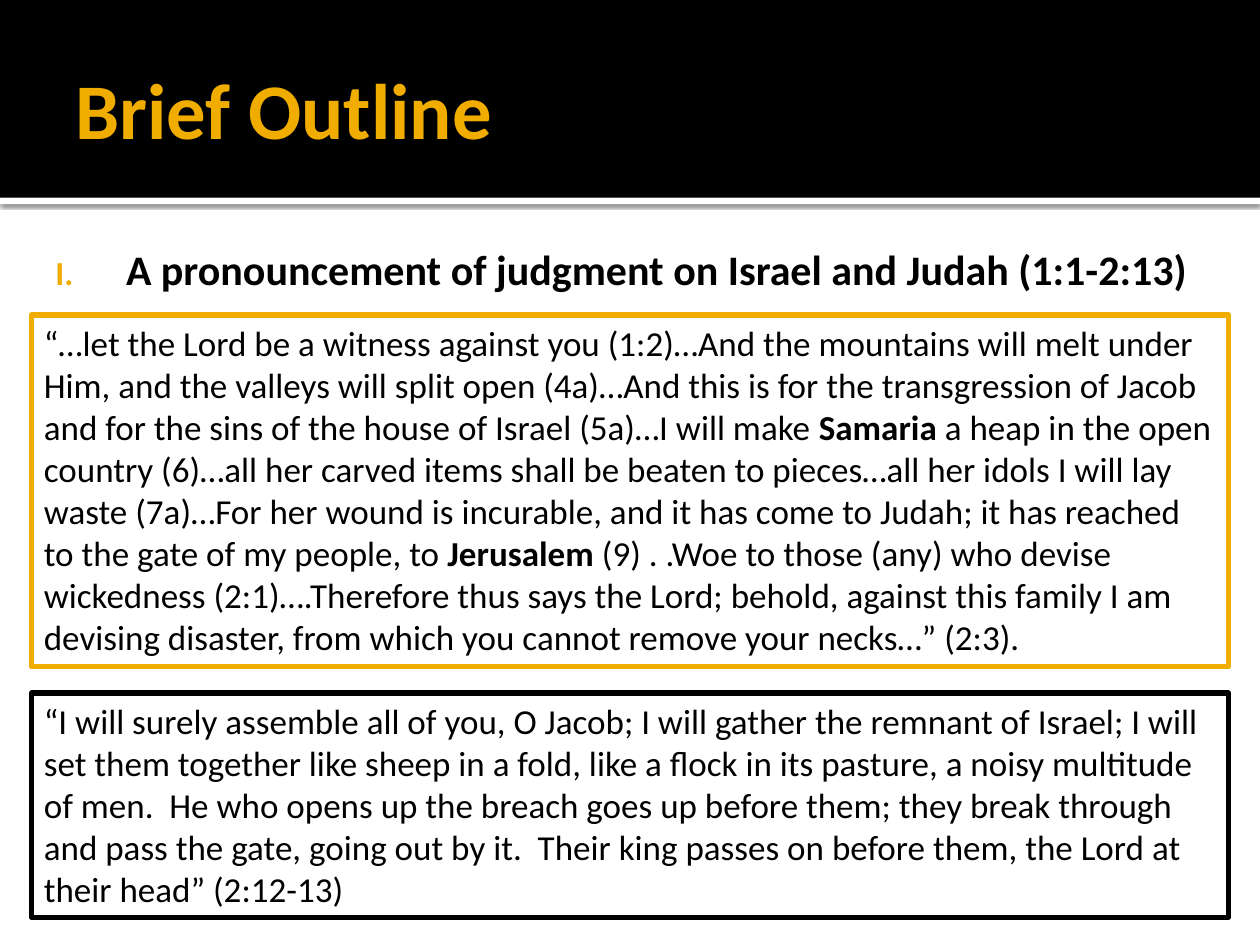
from lxml import etree
from pptx import Presentation
from pptx.dml.color import RGBColor
from pptx.enum.shapes import MSO_SHAPE
from pptx.enum.text import MSO_ANCHOR, MSO_AUTO_SIZE, PP_ALIGN
from pptx.oxml.ns import qn
from pptx.util import Inches, Pt

RECTANGLE = MSO_SHAPE.RECTANGLE
TOP, MIDDLE = MSO_ANCHOR.TOP, MSO_ANCHOR.MIDDLE
LEFT = PP_ALIGN.LEFT
GROW = MSO_AUTO_SIZE.SHAPE_TO_FIT_TEXT

COLORS = {"gold": "F0AD00", "black": "000000", "white": "FFFFFF"}
FONT = "Calibri"

# Passages are lists of (text, bold) runs.
JUDGMENT = [
    ("“…let the Lord be a witness against you (1:2)…And the mountains will melt "
     "under Him, and the valleys will split open (4a)…And this is for the "
     "transgression of Jacob and for the sins of the house of Israel (5a)…I will "
     "make ", False),
    ("Samaria", True),
    (" a heap in the open country (6)…all her carved items shall be beaten to "
     "pieces…all her idols I will lay waste (7a)…For her wound is incurable, and it "
     "has come to Judah; it has reached to the gate of my people, to ", False),
    ("Jerusalem", True),
    (" (9) . .Woe to those (any) who devise wickedness (2:1)….Therefore thus says "
     "the Lord; behold, against this family I am devising disaster, from which you "
     "cannot remove your necks…” (2:3).", False),
]
PROMISE = [
    ("“I will surely assemble all of you, O Jacob; I will gather the remnant of "
     "Israel; I will set them together like sheep in a fold, like a flock in its "
     "pasture, a noisy multitude of men.  He who opens up the breach goes up before "
     "them; they break through and pass the gate, going out by it.  Their king "
     "passes on before them, the Lord at their head” (2:12-13)", False),
]


def rgb(name):
    return RGBColor.from_string(COLORS[name])


def add_band(slide, top, height, color):
    """Add a full-width band without an outline."""
    band = slide.shapes.add_shape(RECTANGLE, 0, Inches(top), Inches(10), Inches(height))
    band.shadow.inherit = False
    band.fill.solid()
    band.fill.fore_color.rgb = rgb(color)
    band.line.fill.background()
    return band


def cast_shadow(shape, blur, distance, opacity):
    """Give the shape a black shadow that falls straight down."""
    effects = shape.element.spPr.find(qn("a:effectLst"))
    shadow = etree.SubElement(
        effects, qn("a:outerShdw"), blurRad=str(Pt(blur)), dist=str(Pt(distance)),
        dir="5400000", algn="tl", rotWithShape="0")
    tint = etree.SubElement(shadow, qn("a:srgbClr"), val=COLORS["black"])
    etree.SubElement(tint, qn("a:alpha"), val=str(opacity * 1000))


def write(shape, runs, size, color, anchor=TOP, margins=(0.1, 0.05, 0.1, 0.05)):
    """Fill the shape with one left-aligned paragraph and return it."""
    frame = shape.text_frame
    frame.word_wrap = True
    frame.vertical_anchor = anchor
    for side, margin in zip(("left", "top", "right", "bottom"), margins):
        setattr(frame, f"margin_{side}", Inches(margin))
    paragraph = frame.paragraphs[0]
    paragraph.alignment = LEFT
    for text, bold in runs:
        run = paragraph.add_run()
        run.text = text
        for name, value in {"name": FONT, "size": Pt(size), "bold": bold}.items():
            setattr(run.font, name, value)
        run.font.color.rgb = rgb(color)
    return paragraph


def add_heading(slide, box, text, size, color, **layout):
    heading = slide.shapes.add_textbox(*map(Inches, box))
    return write(heading, [(text, True)], size, color, **layout)


def number_roman(paragraph, indent, hanging, color, percent):
    """Number the paragraph with a coloured Roman numeral."""
    props = paragraph._p.get_or_add_pPr()
    props.set("marL", str(Inches(indent)))
    props.set("indent", str(-Inches(hanging)))
    bullet_color = etree.SubElement(props, qn("a:buClr"))
    etree.SubElement(bullet_color, qn("a:srgbClr"), val=COLORS[color])
    etree.SubElement(props, qn("a:buSzPct"), val=str(percent * 1000))
    etree.SubElement(props, qn("a:buFont"), typeface="+mj-lt")
    etree.SubElement(props, qn("a:buAutoNum"), type="romanUcPeriod")


def add_passage(slide, top, height, runs, border):
    passage = slide.shapes.add_shape(
        RECTANGLE, Inches(0.25), Inches(top), Inches(9.5), Inches(height))
    passage.shadow.inherit = False
    passage.fill.background()
    passage.line.color.rgb = rgb(border)
    passage.line.width = Pt(3)
    write(passage, runs, 20, "black")
    passage.text_frame.auto_size = GROW


def main():
    deck = Presentation()
    deck.slide_width, deck.slide_height = Inches(10), Inches(7.5)
    slide = deck.slides.add_slide(deck.slide_layouts[6])

    rule = add_band(slide, 1.57, 0.05, "white")
    cast_shadow(rule, blur=2.5, distance=0.8, opacity=60)
    add_band(slide, 0, 1.57, "black")

    add_heading(slide, (0.5, 0.17, 9, 1.37), "Brief Outline", 45, "gold",
                anchor=MIDDLE, margins=(0.1, 0.05, 0.05, 0.05))
    point = add_heading(slide, (0.25, 1.83, 9.75, 0.6),
                        "A pronouncement of judgment on Israel and Judah (1:1-2:13)",
                        24, "black", margins=(0.06, 0.1, 0.1, 0.05))
    number_roman(point, indent=0.69, hanging=0.56, color="gold", percent=80)

    add_passage(slide, 2.5, 2.79, JUDGMENT, "gold")
    add_passage(slide, 5.5, 1.78, PROMISE, "black")
    deck.save("out.pptx")


if __name__ == "__main__":
    main()
